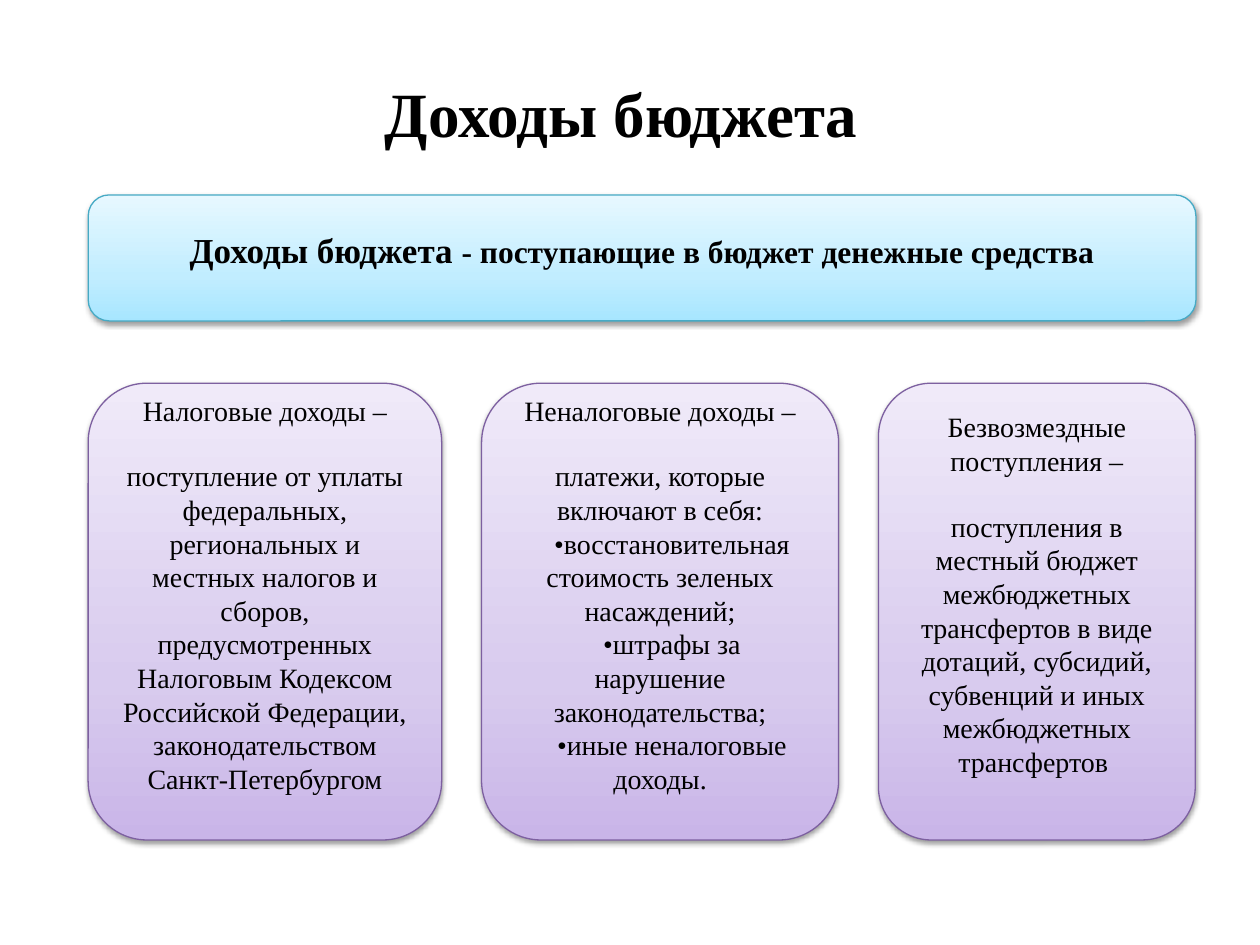
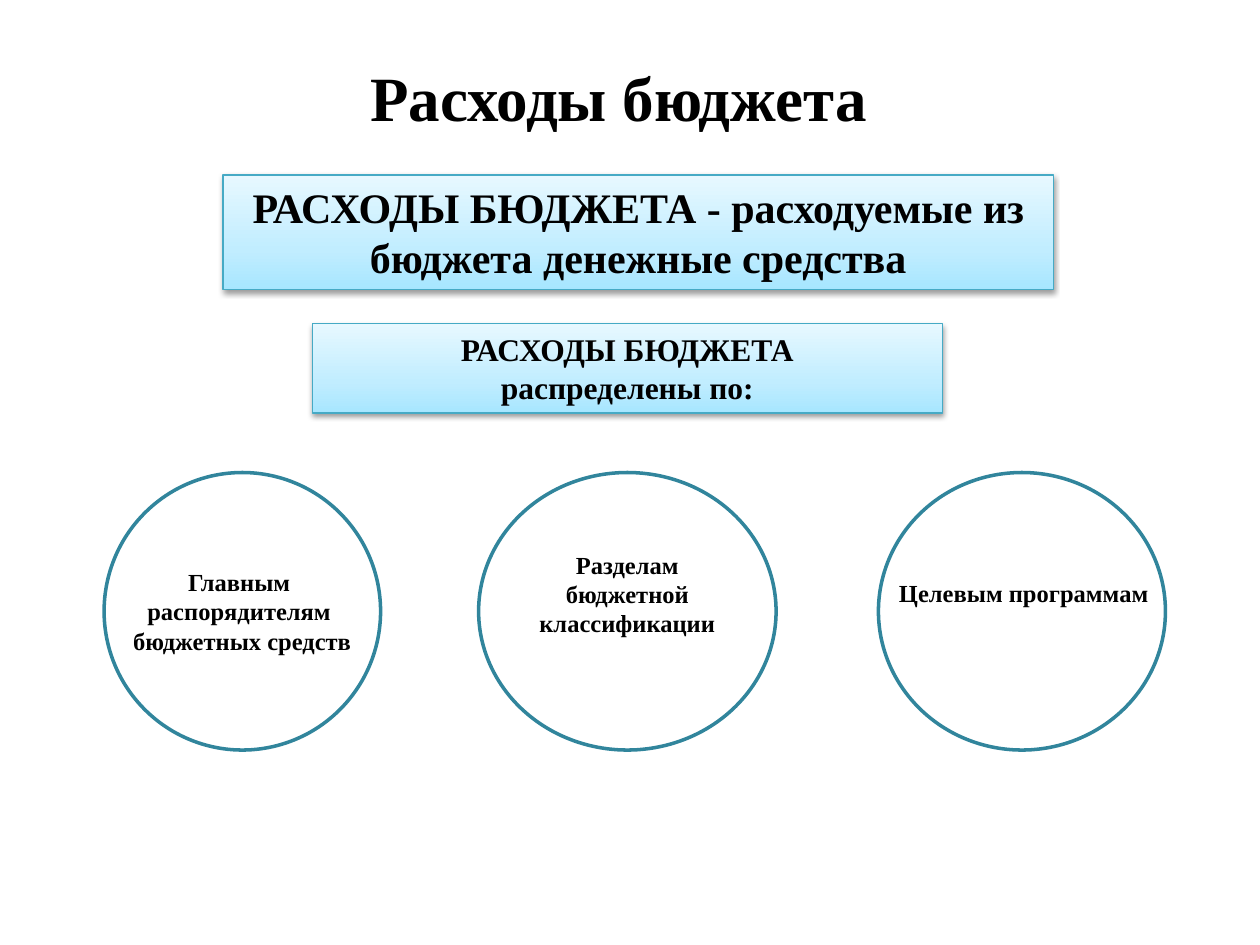
from pptx import Presentation
from pptx.dml.color import RGBColor
from pptx.enum.shapes import MSO_SHAPE
from pptx.enum.text import MSO_ANCHOR, MSO_AUTO_SIZE, PP_ALIGN
from pptx.oxml import parse_xml
from pptx.oxml.ns import nsdecls
from pptx.util import Pt

FONT = "Times New Roman"
BLACK = RGBColor(0x00, 0x00, 0x00)
WHITE = RGBColor(0xFF, 0xFF, 0xFF)
TEAL = RGBColor(0x31, 0x85, 0x9C)
AQUA = RGBColor(0x46, 0xAA, 0xC5)
PLUM = RGBColor(0x7D, 0x60, 0xA0)
# Gradient colours from bottom to top
SKY = (RGBColor(0xA7, 0xE6, 0xFF), RGBColor(0xC1, 0xED, 0xFF),
       RGBColor(0xE7, 0xF8, 0xFF))
LILAC = (RGBColor(0xC9, 0xB5, 0xE8), RGBColor(0xD8, 0xCB, 0xEE),
         RGBColor(0xF0, 0xEA, 0xF9))
STOPS = (0, 35, 100)
PAD = 3.6


# Shared text and shape styles
def add_par(frame, runs, bold=True, first=False):
    par = frame.paragraphs[0] if first else frame.add_paragraph()
    par.alignment = PP_ALIGN.CENTER
    for text, size in runs:
        run = par.add_run()
        run.text = text
        font = run.font
        font.name, font.size, font.bold = FONT, Pt(size), bold
        font.color.rgb = BLACK
    return par


def fill_text(frame, pars, bold=True, anchor=MSO_ANCHOR.MIDDLE, lift=0):
    """Write paragraphs; lift adds room below the text."""
    frame.vertical_anchor = anchor
    frame.margin_bottom = Pt(PAD + lift)
    return [add_par(frame, runs, bold, i == 0) for i, runs in enumerate(pars)]


def add_form(slide, kind, box, edge, width):
    form = slide.shapes.add_shape(kind, *map(Pt, box))
    form.shadow.inherit = False
    form.line.color.rgb = edge
    form.line.width = Pt(width)
    return form


def add_panel(slide, kind, box, tones, edge):
    """Shape with a vertical gradient and a soft shadow below."""
    panel = add_form(slide, kind, box, edge, 0.75)
    stops = "".join(
        f'<a:gs pos="{pos * 1000}"><a:srgbClr val="{tone}"/></a:gs>'
        for pos, tone in zip(STOPS, tones))
    props = panel._element.spPr
    props.insert(2, parse_xml(
        f'<a:gradFill {nsdecls("a")} rotWithShape="1"><a:gsLst>{stops}'
        '</a:gsLst><a:lin ang="16200000" scaled="1"/></a:gradFill>'))
    props.find("{*}effectLst").append(parse_xml(
        f'<a:outerShdw {nsdecls("a")} blurRad="{Pt(3.1)}" dist="{Pt(1.6)}" '
        'dir="5400000" rotWithShape="0"><a:srgbClr val="000000">'
        '<a:alpha val="38000"/></a:srgbClr></a:outerShdw>'))
    return panel


def add_title(slide, text, box, lift=0):
    title = slide.shapes.title
    title.left, title.top, title.width, title.height = map(Pt, box)
    frame = title.text_frame
    frame.auto_size = MSO_AUTO_SIZE.NONE
    frame.margin_top = 0
    fill_text(frame, [[(text, 36)]], lift=lift)


# Income slide
CARDS = (
    (202, "Налоговые доходы –",
     "поступление от уплаты федеральных, региональных и местных налогов и "
     "сборов, предусмотренных Налоговым Кодексом Российской Федерации, "
     "законодательством Санкт-Петербургом", ()),
    (204, "Неналоговые доходы –", "платежи, которые включают в себя:",
     ("•восстановительная стоимость зеленых насаждений;",
      "•штрафы за нарушение законодательства;",
      "•иные неналоговые доходы.")),
    (181, "Безвозмездные поступления –",
     "поступления в местный бюджет межбюджетных трансфертов в виде дотаций, "
     "субсидий, субвенций и иных межбюджетных трансфертов ", ()),
)


def add_card(slide, box, head, body, items):
    card = add_panel(slide, MSO_SHAPE.ROUNDED_RECTANGLE, box, LILAC, PLUM)
    pars = fill_text(card.text_frame,
                     [[(text, 16)] for text in (head, body, *items)],
                     bold=False, lift=20)
    pars[0].space_after = Pt(18.4)
    for par in pars[2:]:
        par._p.get_or_add_pPr().set("indent", str(Pt(13.5)))


def add_cards(slide, left, top, height, gap):
    for width, head, body, items in CARDS:
        add_card(slide, (left, top, width, height), head, body, items)
        left += width + gap


def build_income(slide):
    add_title(slide, "Доходы бюджета", (31, 43.2, 648, 90), lift=44.4)
    add_cards(slide, 50.4, 219, 261, 22.8)
    banner = add_panel(slide, MSO_SHAPE.ROUNDED_RECTANGLE,
                       (50.4, 111.4, 633, 72), SKY, AQUA)
    fill_text(banner.text_frame,
              [[("Доходы бюджета ", 20),
                ("- поступающие в бюджет денежные средства", 18)]], lift=9)


# Spending slide
def add_band(slide, box, lines, size):
    band = add_panel(slide, MSO_SHAPE.RECTANGLE, box, SKY, AQUA)
    fill_text(band.text_frame, [[(line, size)] for line in lines],
              anchor=MSO_ANCHOR.TOP)


def add_ring(slide, box):
    ring = add_form(slide, MSO_SHAPE.OVAL, box, TEAL, 2)
    ring.fill.solid()
    ring.fill.fore_color.rgb = WHITE
    return ring


def add_label(slide, box, lines):
    frame = slide.shapes.add_textbox(*map(Pt, box)).text_frame
    frame.word_wrap = False
    fill_text(frame, [[(line, 14)] for line in lines], anchor=MSO_ANCHOR.TOP)


def add_rings(slide, top, height):
    spans = ((59.5, 158), (273.5, 170), (502, 164))
    rings = [add_ring(slide, (left, top, width, height))
             for left, width in spans]
    fill_text(rings[1].text_frame,
              [[("Разделам бюджетной классификации", 14)]], lift=20)
    add_label(slide, (68.4, top + 50.4, 140, 58),
              ("Главным ", "распорядителям ", "бюджетных средств"))
    add_label(slide, (506, top + 57, 158, 24.5), ("Целевым программам",))


def build_costs(slide):
    add_title(slide, "Расходы бюджета", (20, 11, 667, 91.4))
    add_band(slide, (127.5, 100, 474.5, 65.5),
             ("РАСХОДЫ БЮДЖЕТА - расходуемые из бюджета денежные средства",),
             24)
    add_band(slide, (178.5, 185, 360, 51),
             ("РАСХОДЫ БЮДЖЕТА", "распределены по:"), 18)
    add_rings(slide, 270, 158.6)


def main():
    deck = Presentation()
    deck.slide_width, deck.slide_height = Pt(720), Pt(540)
    for build in (build_income, build_costs):
        build(deck.slides.add_slide(deck.slide_layouts[5]))
    deck.save("out.pptx")


if __name__ == "__main__":
    main()
